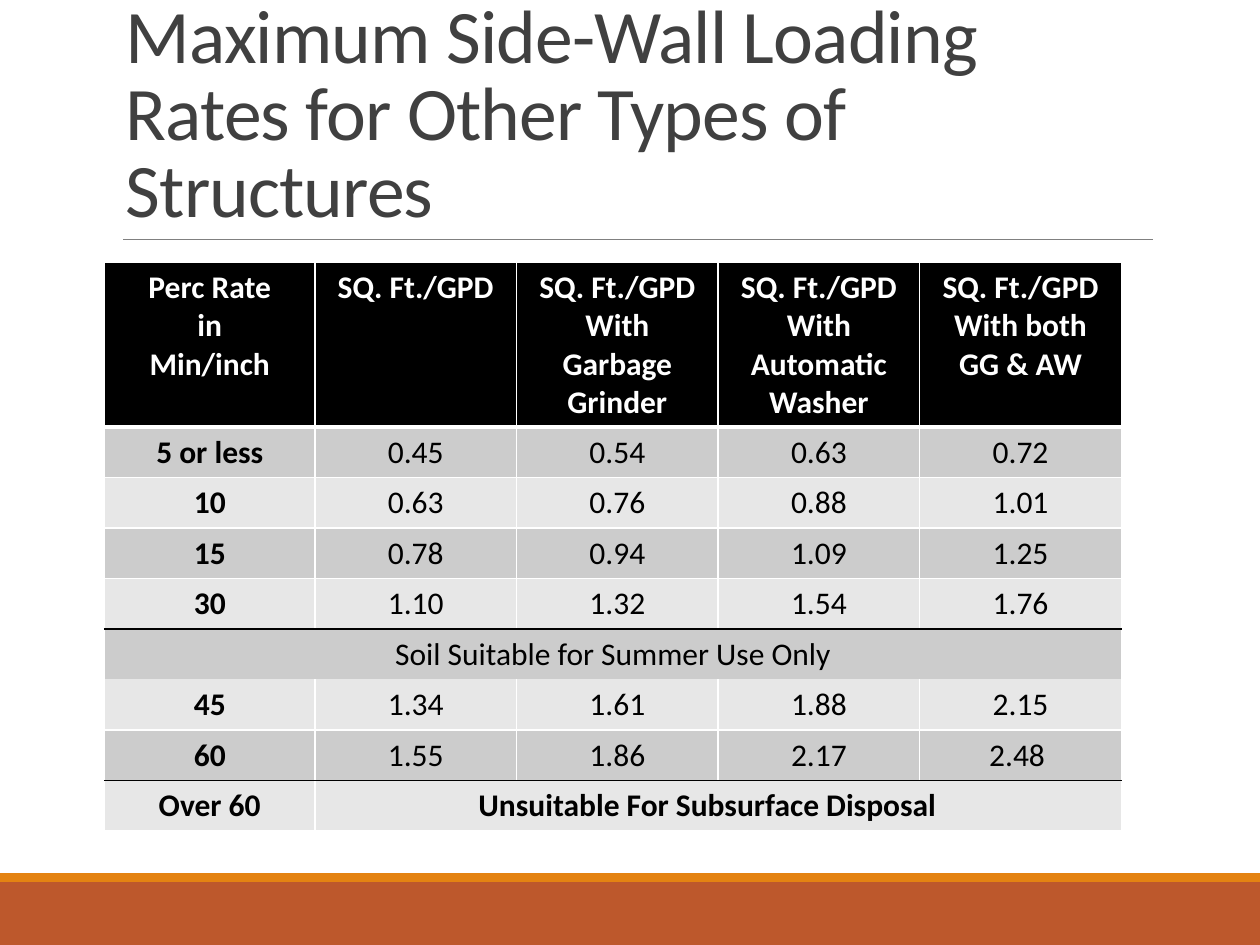
from dataclasses import dataclass

from lxml.etree import SubElement
from pptx import Presentation
from pptx.dml.color import RGBColor
from pptx.enum.shapes import MSO_CONNECTOR, MSO_SHAPE
from pptx.enum.text import MSO_ANCHOR, PP_ALIGN
from pptx.oxml.ns import qn
from pptx.util import Inches, Pt


@dataclass(frozen=True)
class Theme:
    """Colours, font and type sizes of the slide."""
    font: str = "Calibri"
    title_size: float = 43.2
    table_size: float = 18
    title: str = "404040"
    rule: str = "808080"
    footer: str = "BD582C"
    accent: str = "E48312"
    dark: str = "000000"
    light: str = "FFFFFF"
    bands: tuple = ("CCCCCC", "E7E7E7")


THEME = Theme()
WHITE, BLACK, THICK = (THEME.light, 1), (THEME.dark, 1), (THEME.light, 3)
COLUMN_WIDTHS = [1.67] + [1.6] * 4
HEADER_HEIGHT, ROW_HEIGHT = 1.31, 0.4

HEADER = [
    "Perc Rate\nin\nMin/inch",
    "SQ. Ft./GPD",
    "SQ. Ft./GPD\nWith Garbage Grinder",
    "SQ. Ft./GPD\nWith Automatic Washer",
    "SQ. Ft./GPD\nWith both GG & AW",
]
BODY = [
    ["5 or less", "0.45", "0.54", "0.63", "0.72"],
    ["10", "0.63", "0.76", "0.88", "1.01"],
    ["15", "0.78", "0.94", "1.09", "1.25"],
    ["30", "1.10", "1.32", "1.54", "1.76"],
    ["Soil Suitable for Summer Use Only"],
    ["45", "1.34", "1.61", "1.88", "2.15"],
    ["60", "1.55", "1.86", "2.17", "2.48 "],
    ["Over 60", "Unsuitable For Subsurface Disposal"],
]
SUMMER_ROW, UNSUITABLE_ROW = 5, 8
ROW_EDGES = {
    0: {"B": THICK},
    1: {"T": THICK},
    4: {"B": BLACK},
    SUMMER_ROW: {"L": None, "R": None, "T": BLACK, "B": None},
    6: {"T": None},
    7: {"B": BLACK},
    UNSUITABLE_ROW: {"T": BLACK},
}


def apply_format(target, values):
    """Set every attribute named in values on the target."""
    for name, value in values.items():
        setattr(target, name, value)


def write_text(text_frame, text, size, color, bold=False, **paragraph_format):
    """Fill a text frame with one paragraph per line of text."""
    text_frame.text = text
    font_format = {"name": THEME.font, "size": Pt(size), "bold": bold}
    for paragraph in text_frame.paragraphs:
        apply_format(paragraph, paragraph_format)
        for run in paragraph.runs:
            apply_format(run.font, font_format)
            run.font.color.rgb = RGBColor.from_string(color)


def add_band(slide, top, height, color):
    """Add a full-width plain band."""
    shape = slide.shapes.add_shape(
        MSO_SHAPE.RECTANGLE, 0, Inches(top), Inches(10), Inches(height))
    shape.shadow.inherit = False
    shape.fill.solid()
    shape.fill.fore_color.rgb = RGBColor.from_string(color)
    shape.line.fill.background()


def add_rule(slide, left, right, top):
    """Add the thin line under the title."""
    connector = slide.shapes.add_connector(
        MSO_CONNECTOR.STRAIGHT, Inches(left), Inches(top), Inches(right), Inches(top))
    connector.line.width = Pt(0.5)
    connector.line.color.rgb = RGBColor.from_string(THEME.rule)
    SubElement(connector._element.spPr, qn("a:effectLst"))


def add_title(slide, text):
    """Add the bottom-anchored title."""
    shape = slide.shapes.add_textbox(Inches(0.9), Inches(0.31), Inches(8.25), Inches(1.59))
    text_frame = shape.text_frame
    apply_format(text_frame, {"word_wrap": True, "vertical_anchor": MSO_ANCHOR.BOTTOM})
    write_text(text_frame, text, THEME.title_size, THEME.title, line_spacing=0.85)
    text_frame.paragraphs[0].runs[0].font._element.set("spc", "-50")


def set_borders(cell, edges):
    """Draw the cell edges, leaving out those set to None."""
    properties = cell._tc.get_or_add_tcPr()
    for side in "LRTB":
        edge = edges[side]
        line = SubElement(properties, qn(f"a:ln{side}"))
        if edge is None:
            SubElement(line, qn("a:noFill"))
            continue
        color, width = edge
        line.set("w", str(Pt(width)))
        fill = SubElement(line, qn("a:solidFill"))
        SubElement(fill, qn("a:srgbClr")).set("val", color)


def fill_row(table, row_index, texts):
    """Write and colour one table row."""
    header = row_index == 0
    edges = dict.fromkeys("LRTB", WHITE) | ROW_EDGES.get(row_index, {})
    background = THEME.dark if header else THEME.bands[(row_index - 1) % 2]
    for column_index in range(len(COLUMN_WIDTHS)):
        cell = table.cell(row_index, column_index)
        set_borders(cell, edges)
        cell.fill.solid()
        cell.fill.fore_color.rgb = RGBColor.from_string(background)
        if column_index < len(texts):
            bold = (header or row_index == UNSUITABLE_ROW
                    or column_index == 0 and row_index != SUMMER_ROW)
            write_text(cell.text_frame, texts[column_index], THEME.table_size,
                       THEME.light if header else THEME.dark, bold,
                       alignment=PP_ALIGN.CENTER)


def add_rates_table(slide):
    """Add the table of loading rates."""
    rows = [HEADER] + BODY
    heights = [HEADER_HEIGHT] + [ROW_HEIGHT] * len(BODY)
    table = slide.shapes.add_table(
        len(rows), len(COLUMN_WIDTHS), Inches(0.83), Inches(2.08),
        Inches(sum(COLUMN_WIDTHS)), Inches(sum(heights))).table
    apply_format(table, {"first_row": False, "horz_banding": False})
    for column, width in zip(table.columns, COLUMN_WIDTHS):
        column.width = Inches(width)
    for row_index, (texts, height) in enumerate(zip(rows, heights)):
        table.rows[row_index].height = Inches(height)
        fill_row(table, row_index, texts)
    for row_index, first in ((SUMMER_ROW, 0), (UNSUITABLE_ROW, 1)):
        table.cell(row_index, first).merge(table.cell(row_index, len(COLUMN_WIDTHS) - 1))
    table.cell(UNSUITABLE_ROW, 1).margin_right = Inches(0.27)


def main():
    """Build and save the slide."""
    presentation = Presentation()
    apply_format(presentation, {"slide_width": Inches(10), "slide_height": Inches(7.5)})
    slide = presentation.slides.add_slide(presentation.slide_layouts[6])
    add_band(slide, 7, 0.5, THEME.footer)
    add_band(slide, 6.93, 0.07, THEME.accent)
    add_rule(slide, 0.98, 9.15, 1.9)
    add_title(slide, "Maximum Side-Wall Loading Rates for Other Types of Structures")
    add_rates_table(slide)
    presentation.save("out.pptx")


if __name__ == "__main__":
    main()
